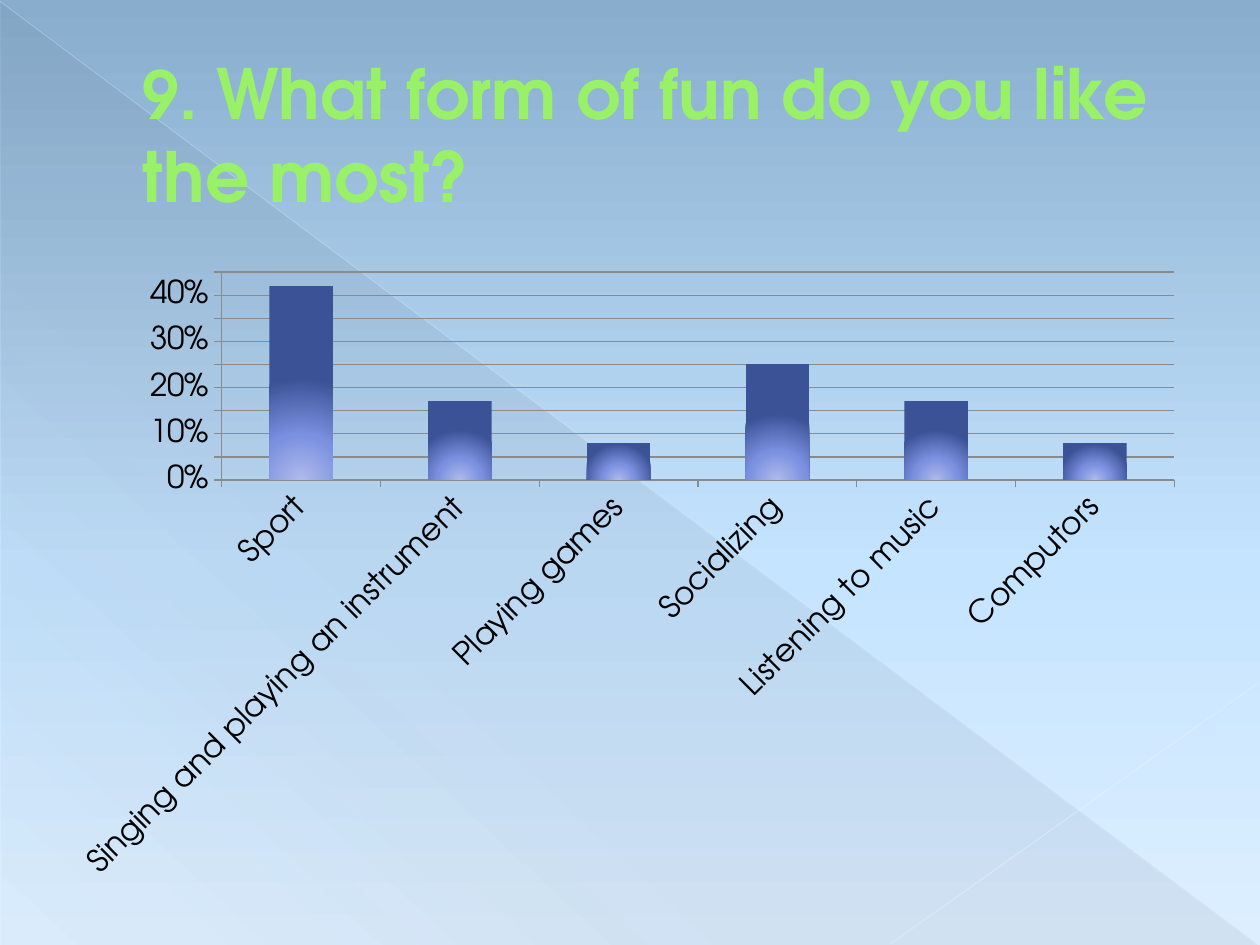
from lxml.etree import SubElement
from pptx import Presentation
from pptx.chart.data import CategoryChartData
from pptx.dml.color import RGBColor
from pptx.enum.chart import XL_CHART_TYPE as ChartType, XL_TICK_MARK as Tick
from pptx.enum.shapes import MSO_CONNECTOR as Connector, MSO_SHAPE as Shape
from pptx.enum.text import MSO_ANCHOR as Anchor, PP_ALIGN as Align
from pptx.oxml import parse_xml
from pptx.oxml.ns import nsdecls, qn
from pptx.util import Inches, Pt

FONT = "TeX Gyre Adventor"
COLORS = {
    "sky top": "88ADCD", "sky middle": "C5E4FF", "sky bottom": "DDEFFF",
    "shade": "4E5B6F", "long ray": "EAF5FF", "short ray": "ECF6FF",
    "title": "98F167", "title edge": "589129", "axis": "8B8B8B", "text": "000000",
    "bar glow": "B0BAEB", "bar middle": "7A90E0", "bar edge": "3C5296",
}
LINEAR = '<a:lin ang="{}" scaled="0"/>'
GLOW = '<a:path path="circle"><a:fillToRect l="50000" t="100000" r="50000"/></a:path>'


def rgb(name):
    return RGBColor.from_string(COLORS[name])


def set_gradient(fill, parent, stops, direction):
    """Fill with stops of (position %, colour name, opacity %)."""
    fill.solid()
    marks = "".join(
        f'<a:gs pos="{pos * 1000}"><a:srgbClr val="{COLORS[name]}">'
        f'<a:alpha val="{opacity * 1000}"/></a:srgbClr></a:gs>'
        for pos, name, opacity in stops)
    solid = parent.find(".//" + qn("a:solidFill"))
    solid.getparent().replace(solid, parse_xml(
        f'<a:gradFill {nsdecls("a")} rotWithShape="1"><a:gsLst>{marks}</a:gsLst>'
        f'{direction}</a:gradFill>'))


deck = Presentation()
deck.slide_width, deck.slide_height = Inches(10), Inches(7.5)
page = deck.slides.add_slide(deck.slide_layouts[5])

# Background: sky, shaded triangle and two light rays
sky = page.background.fill
set_gradient(sky, page.element, [
    (0, "sky top", 100), (60, "sky middle", 100), (100, "sky bottom", 100)],
    LINEAR.format(90 * 60000))

shade = page.shapes.add_shape(
    Shape.RIGHT_TRIANGLE, Inches(0.01), Inches(0.02), Inches(9.98), Inches(7.48))
shade.shadow.inherit = False
shade.line.fill.background()
set_gradient(shade.fill, shade.element.spPr, [
    (0, "shade", 10), (70, "shade", 8), (100, "shade", 1)],
    LINEAR.format(133 * 60000))

for name, ends, width, opacity in [
    ("long ray", (0, 0.01, 9.99, 7.49), 0.39, 35),
    ("short ray", (10, 5.41, 7.07, 7.49), 0.47, 45),
]:
    ray = page.shapes.add_connector(Connector.STRAIGHT, *map(Inches, ends))
    ray.line.width = Pt(width)
    ray.line.color.rgb = rgb(name)
    color = ray.element.spPr.find(".//" + qn("a:srgbClr"))
    SubElement(color, qn("a:alpha"), val=str(opacity * 1000))
    SubElement(ray.element.spPr, qn("a:effectLst"))

# Title, in front of the background
title = page.shapes.title
page.shapes.element.append(title.element)
title.left, title.top, title.width, title.height = map(Inches, (0.5, 0.29, 9, 1.53))
title.text_frame.vertical_anchor = Anchor.MIDDLE
title.text_frame.word_wrap = True
para = title.text_frame.paragraphs[0]
para.alignment = Align.LEFT
para._p.get_or_add_pPr().set("marL", str(Inches(0.53)))
para._p.get_or_add_pPr().set("indent", "0")
for text, size in [("9. ", 37.8), ("What form of fun do you like the most?", 39.6)]:
    span = para.add_run()
    span.text = text
    span.font.name, span.font.size, span.font.bold = FONT, Pt(size), True
    span.font.color.rgb = rgb("title")
    span.font._element.insert(0, parse_xml(
        f'<a:ln {nsdecls("a")} w="{Pt(0.5)}"><a:solidFill>'
        f'<a:srgbClr val="{COLORS["title edge"]}"/></a:solidFill></a:ln>'))

# Chart
data = CategoryChartData(number_format="0%")
data.categories = ["Sport", "Singing and playing an instrument", "Playing games",
                   "Socializing", "Listening to music", "Computors"]
data.add_series("Series 1", [0.42, 0.17, 0.08, 0.25, 0.17, 0.08])
chart = page.shapes.add_chart(
    ChartType.COLUMN_CLUSTERED, Inches(0.5), Inches(2.06), Inches(9), Inches(5), data).chart
chart.has_legend = chart.has_title = False
chart.font.name, chart.font.size = FONT, Pt(18)
chart.font.color.rgb = rgb("text")

value_axis, category_axis = chart.value_axis, chart.category_axis
value_axis.minimum_scale, value_axis.maximum_scale, value_axis.major_unit = 0, 0.45, 0.05
value_axis.tick_labels.number_format = "0%"
value_axis.tick_labels.number_format_is_linked = False
value_axis.has_major_gridlines = True
for axis in (value_axis, category_axis):
    axis.major_tick_mark, axis.minor_tick_mark = Tick.OUTSIDE, Tick.NONE
for line in (value_axis.format.line, category_axis.format.line,
             value_axis.major_gridlines.format.line):
    line.width = Pt(0.75)
    line.color.rgb = rgb("axis")
category_axis.tick_labels.font.size = Pt(18)
category_axis._element.find(".//" + qn("a:bodyPr")).set("rot", str(-45 * 60000))

plot = chart.plots[0]
plot.gap_width, plot.vary_by_categories = 150, False
bars = plot.series[0]
set_gradient(bars.format.fill, bars._element, [
    (0, "bar glow", 100), (45, "bar middle", 100), (100, "bar edge", 100)], GLOW)

# Plot area as shares of the chart's size
area = chart._chartSpace.chart.plotArea
for old in area.findall(qn("c:layout")):
    area.remove(old)
area.insert(0, parse_xml(
    f'<c:layout {nsdecls("c")}><c:manualLayout><c:layoutTarget val="inner"/>'
    '<c:xMode val="edge"/><c:yMode val="edge"/><c:x val="0.14"/><c:y val="0.02"/>'
    '<c:w val="0.84"/><c:h val="0.33"/></c:manualLayout></c:layout>'))

deck.save("out.pptx")
